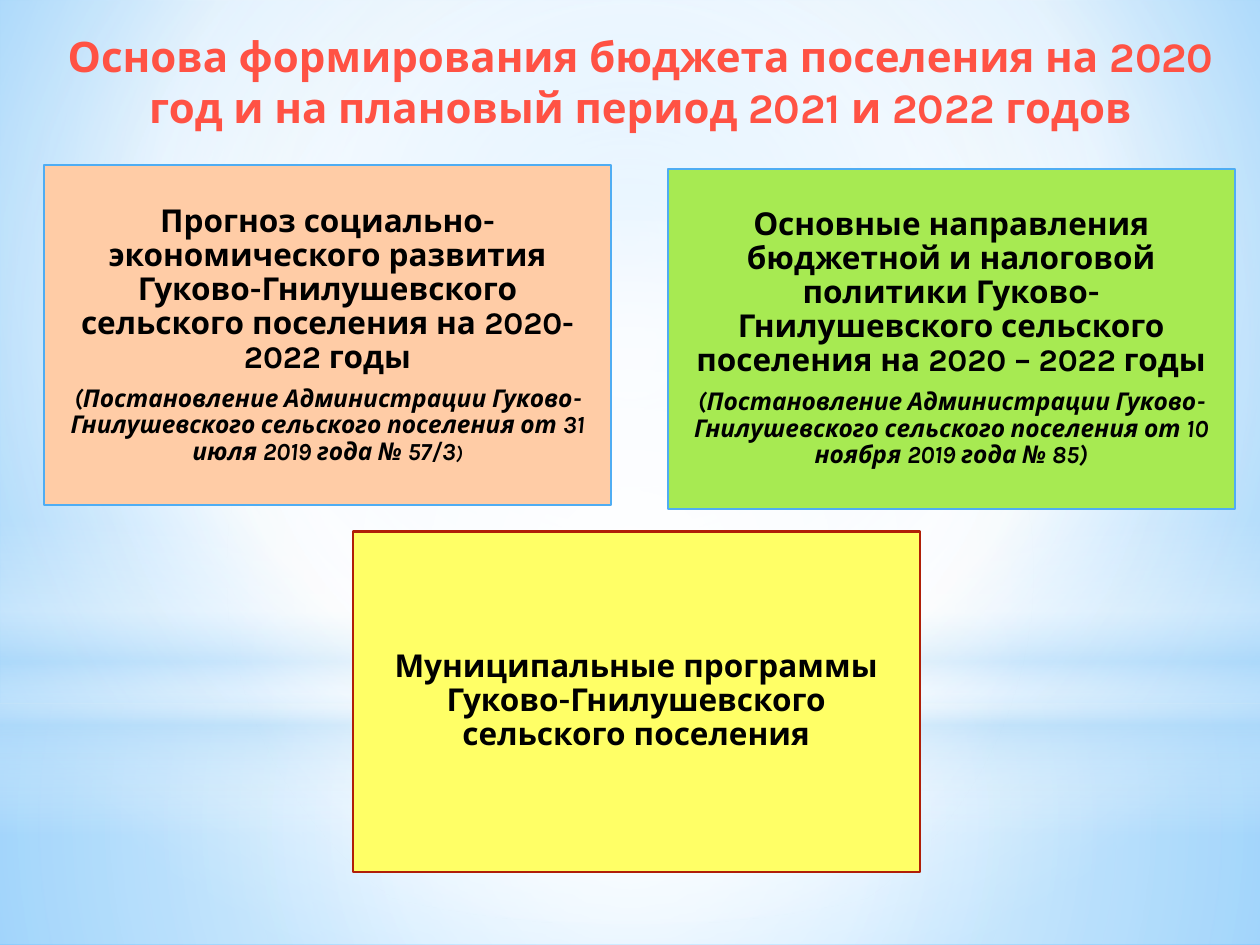
from lxml import etree
from pptx import Presentation
from pptx.dml.color import RGBColor
from pptx.enum.shapes import MSO_SHAPE
from pptx.enum.text import MSO_ANCHOR, MSO_AUTO_SIZE, PP_ALIGN
from pptx.oxml.ns import qn
from pptx.util import Pt

RECTANGLE, OVAL = MSO_SHAPE.RECTANGLE, MSO_SHAPE.OVAL
MIDDLE, CENTER = MSO_ANCHOR.MIDDLE, PP_ALIGN.CENTER
FONT = "Karla"

WHITE = RGBColor(0xFF, 0xFF, 0xFF)
PALE_BLUE = RGBColor(0xB4, 0xDC, 0xFA)
SKY = RGBColor(0x9E, 0xD5, 0xFF)
DEEP_SKY = RGBColor(0x5B, 0xB9, 0xFF)
CORAL = RGBColor(0xFF, 0x52, 0x44)
BLACK = RGBColor(0, 0, 0)
PEACH = RGBColor(0xFF, 0xCC, 0xA6)
GREEN = RGBColor(0xA7, 0xEA, 0x52)
YELLOW = RGBColor(0xFF, 0xFF, 0x66)
BLUE_LINE = RGBColor(0x4F, 0xAD, 0xF3)
RED_LINE = RGBColor(0xB0, 0x1F, 0x07)


def set_gradient(fill, element, stops, focus=None):
    """Fill with (position, colour, opacity) stops, circular around focus or top to bottom."""
    fill.gradient()
    gradient = element.xpath(".//a:gradFill")[0]
    for child in list(gradient):
        gradient.remove(child)
    stop_list = etree.SubElement(gradient, qn("a:gsLst"))
    for position, color, opacity in stops:
        stop = etree.SubElement(stop_list, qn("a:gs"), pos=str(position * 1000))
        tint = etree.SubElement(stop, qn("a:srgbClr"), val=str(color))
        if opacity < 100:
            etree.SubElement(tint, qn("a:alpha"), val=str(opacity * 1000))
    if focus:
        circle = etree.SubElement(gradient, qn("a:path"), path="circle")
        sides = {side: str(value * 1000) for side, value in zip("ltrb", focus)}
        etree.SubElement(circle, qn("a:fillToRect"), **sides)
    else:
        etree.SubElement(gradient, qn("a:lin"), ang="5400000", scaled="0")


deck = Presentation()
deck.slide_width, deck.slide_height = Pt(720), Pt(540)
slide = deck.slides.add_slide(deck.slide_layouts[5])

# Background and its translucent light layers
set_gradient(slide.background.fill, slide.element,
             [(0, SKY, 100), (60, WHITE, 100), (100, DEEP_SKY, 100)], (20, 10, 20, 60))
CENTRE = (50, 50, 50, 50)
layers = [
    (RECTANGLE, 402, 138, [(0, WHITE, 91), (37, WHITE, 76), (100, PALE_BLUE, 79)], CENTRE),
    (RECTANGLE, 0, 402, [(0, WHITE, 89), (48, WHITE, 62), (100, PALE_BLUE, 79)], CENTRE),
    (RECTANGLE, 297, 180, [(0, WHITE, 0), (29, WHITE, 30), (45, PALE_BLUE, 40),
                           (55, WHITE, 26), (65, PALE_BLUE, 60), (100, WHITE, 0)], None),
    (OVAL, 126, 402, [(0, WHITE, 100), (56, WHITE, 0)], CENTRE),
]
for kind, top, height, stops, focus in layers:
    layer = slide.shapes.add_shape(kind, 0, Pt(top), Pt(720), Pt(height))
    layer.shadow.inherit = False
    layer.line.fill.background()
    set_gradient(layer.fill, layer.element, stops, focus)

# Title, brought in front of the layers
title = slide.shapes.title
title.element.getparent().append(title.element)
title.left, title.top, title.width, title.height = Pt(24), Pt(15), Pt(684), Pt(63)
frame = title.text_frame
frame.text = "Основа формирования бюджета поселения на 2020 год и на плановый период 2021 и 2022 годов"
frame.word_wrap = True
frame.auto_size = MSO_AUTO_SIZE.NONE
frame.vertical_anchor = MIDDLE
para = frame.paragraphs[0]
para.alignment = CENTER
para.font.name, para.font.size, para.font.bold = FONT, Pt(24), True
para.font.color.rgb = CORAL

# Three budget foundations: paragraphs are lists of (text, size), the second one italic
boxes = [
    (25.2, 94.3, PEACH, BLUE_LINE, [
        [("Прогноз социально-экономического развития Гуково-Гнилушевского "
          "сельского поселения на 2020-2022 годы", 18)],
        [("(Постановление Администрации Гуково-Гнилушевского сельского поселения "
          "от 31 июля 2019 года № 57/3", 14), (")", 11)]]),
    (381.6, 96.5, GREEN, BLUE_LINE, [
        [("Основные направления бюджетной и налоговой политики Гуково-Гнилушевского "
          "сельского поселения на 2020 – 2022 годы", 18)],
        [("(Постановление Администрации Гуково-Гнилушевского сельского поселения "
          "от 10 ноября 2019 года № 85)", 14)]]),
    (201.6, 303.8, YELLOW, RED_LINE, [
        [("Муниципальные программы Гуково-Гнилушевского сельского поселения", 18)]]),
]
for left, top, fill_color, line_color, paragraphs in boxes:
    box = slide.shapes.add_shape(RECTANGLE, Pt(left), Pt(top), Pt(324), Pt(194.4))
    box.shadow.inherit = False
    box.fill.solid()
    box.fill.fore_color.rgb = fill_color
    box.line.color.rgb = line_color
    box.line.width = Pt(1.25)
    frame = box.text_frame
    frame.word_wrap = True
    frame.vertical_anchor = MIDDLE
    frame.margin_left = frame.margin_right = frame.margin_top = frame.margin_bottom = Pt(5)
    for index, spans in enumerate(paragraphs):
        para = frame.add_paragraph() if index else frame.paragraphs[0]
        para.alignment = CENTER
        para.line_spacing = 0.9
        para.space_after = Pt(6.3)
        para.font.name, para.font.bold, para.font.italic = FONT, True, index > 0
        para.font.color.rgb = BLACK
        for text, size in spans:
            span = para.add_run()
            span.text = text
            span.font.size = Pt(size)

deck.save("out.pptx")
